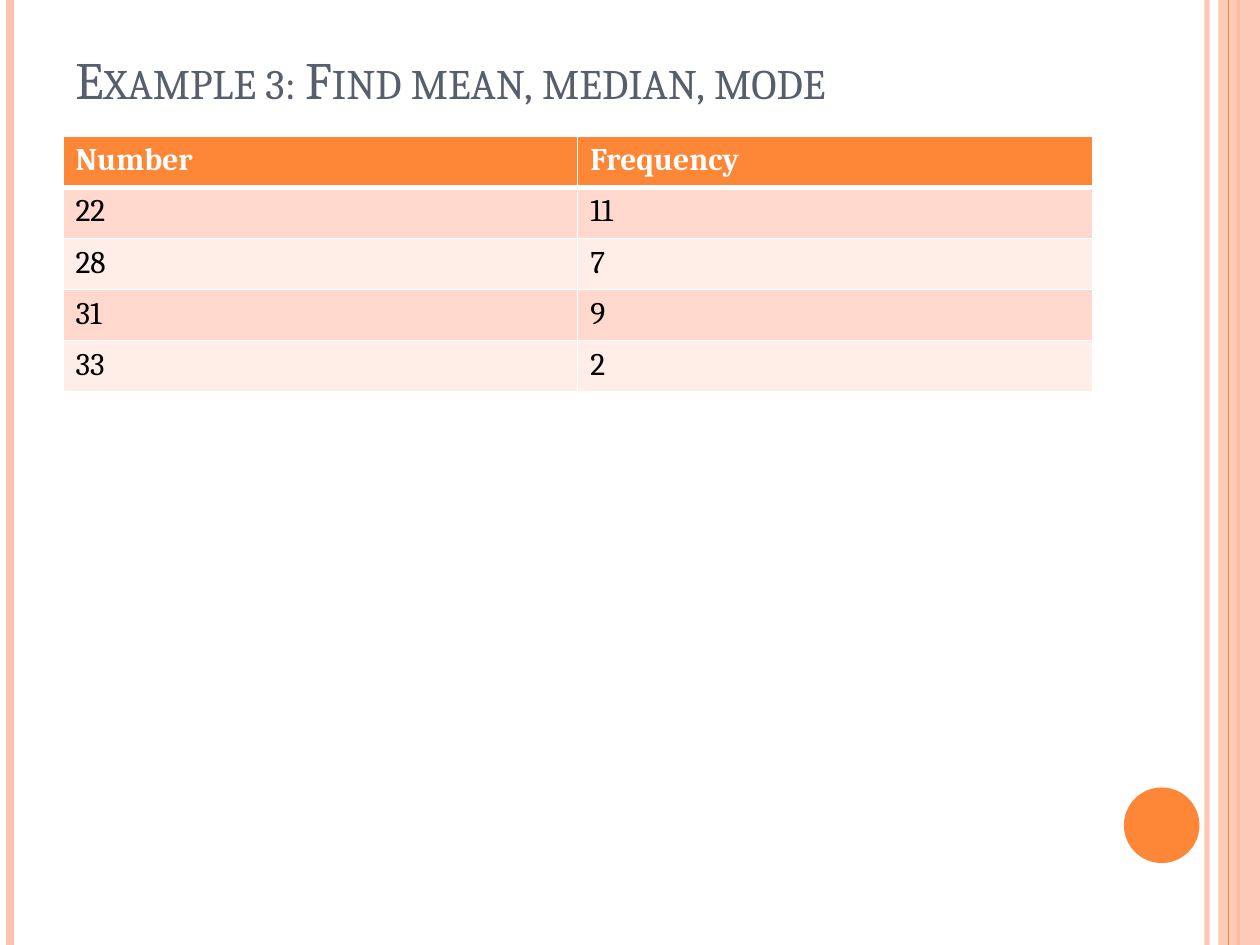
from lxml import etree
from pptx import Presentation
from pptx.dml.color import RGBColor
from pptx.enum.shapes import MSO_CONNECTOR, MSO_SHAPE
from pptx.enum.text import MSO_ANCHOR
from pptx.oxml.ns import qn
from pptx.util import Inches, Pt

STRAIGHT = MSO_CONNECTOR.STRAIGHT
RECTANGLE, OVAL = MSO_SHAPE.RECTANGLE, MSO_SHAPE.OVAL
BOTTOM = MSO_ANCHOR.BOTTOM

ORANGE = RGBColor(0xFE, 0x86, 0x37)
PEACH = RGBColor(0xFE, 0xC3, 0xAE)
SLATE = RGBColor(0x57, 0x5F, 0x6D)
WHITE = RGBColor(0xFF, 0xFF, 0xFF)
BLACK = RGBColor(0x00, 0x00, 0x00)
BANDS = (RGBColor(0xFF, 0xD9, 0xCE), RGBColor(0xFF, 0xED, 0xE8))
FONT = "Cambria"

WIDTH, HEIGHT = 10, 7.5
LEFT, CONTENT_WIDTH = 0.5, 8.17
TABLE_TOP, ROW_HEIGHT = 1.08, 0.406

TITLE = "Example 3: Find mean, median, mode"
FREQUENCIES = [
    ("Number", "Frequency"),
    ("22", "11"),
    ("28", "7"),
    ("31", "9"),
    ("33", "2"),
]
# x, colour, weight in points, opacity in percent
RULES_BEHIND_BAND = [
    (9.58, PEACH, 3, 93),
    (0.08, PEACH, 4.5, 100),
    (9.83, ORANGE, 1.5, 100),
]
RULE_OVER_BAND = (9.75, ORANGE, 0.75, 100)


def set_opacity(parent, percent):
    color = parent.find(".//" + qn("a:srgbClr"))
    etree.SubElement(color, qn("a:alpha"), val=str(percent * 1000))


def add_rule(slide, x, color, weight, opacity):
    """Draw a vertical line over the full slide height."""
    rule = slide.shapes.add_connector(
        STRAIGHT, Inches(x), 0, Inches(x), Inches(HEIGHT))
    rule.line.color.rgb = color
    rule.line.width = Pt(weight)
    if opacity < 100:
        set_opacity(rule.line._get_or_add_ln(), opacity)
    etree.SubElement(rule._element.spPr, qn("a:effectLst"))


def add_plain_shape(slide, preset, x, y, width, height, color):
    shape = slide.shapes.add_shape(
        preset, Inches(x), Inches(y), Inches(width), Inches(height))
    shape.shadow.inherit = False
    shape.fill.solid()
    shape.fill.fore_color.rgb = color
    shape.line.fill.background()
    return shape


def add_run(paragraph, text, size, color, bold=False):
    run = paragraph.add_run()
    run.text = text
    run.font.name = FONT
    run.font.size = Pt(size)
    run.font.color.rgb = color
    run.font.bold = bold
    return run


def add_title(slide):
    title = slide.shapes.add_textbox(
        Inches(LEFT), Inches(0.3), Inches(CONTENT_WIDTH), Inches(0.62))
    frame = title.text_frame
    frame.word_wrap = True
    frame.vertical_anchor = BOTTOM
    run = add_run(frame.paragraphs[0], TITLE, 30, SLATE)
    run.font._element.set("cap", "small")


def set_borders(cell, top, bottom):
    """Give the cell white borders; top and bottom weights are in points."""
    properties = cell._tc.get_or_add_tcPr()
    for side, weight in (("L", 1), ("R", 1), ("T", top), ("B", bottom)):
        border = etree.SubElement(
            properties, qn("a:ln" + side), w=str(Pt(weight)))
        fill = etree.SubElement(border, qn("a:solidFill"))
        etree.SubElement(fill, qn("a:srgbClr"), val=str(WHITE))


def add_frequency_table(slide):
    rows, columns = len(FREQUENCIES), len(FREQUENCIES[0])
    table = slide.shapes.add_table(
        rows, columns, Inches(LEFT), Inches(TABLE_TOP),
        Inches(CONTENT_WIDTH), Inches(ROW_HEIGHT * rows)).table
    for r, values in enumerate(FREQUENCIES):
        header = r == 0
        for c, value in enumerate(values):
            cell = table.cell(r, c)
            set_borders(cell, top=3 if r == 1 else 1, bottom=3 if header else 1)
            cell.fill.solid()
            cell.fill.fore_color.rgb = ORANGE if header else BANDS[(r - 1) % 2]
            add_run(cell.text_frame.paragraphs[0], value, 18,
                    WHITE if header else BLACK, bold=header)


def main():
    presentation = Presentation()
    presentation.slide_width = Inches(WIDTH)
    presentation.slide_height = Inches(HEIGHT)
    slide = presentation.slides.add_slide(presentation.slide_layouts[6])

    for rule in RULES_BEHIND_BAND:
        add_rule(slide, *rule)
    band = add_plain_shape(slide, RECTANGLE, 9.67, 0, 0.33, HEIGHT, PEACH)
    set_opacity(band._element.spPr, 87)
    add_rule(slide, *RULE_OVER_BAND)
    add_plain_shape(slide, OVAL, 8.92, 6.25, 0.6, 0.6, ORANGE)

    add_title(slide)
    add_frequency_table(slide)
    presentation.save("out.pptx")


if __name__ == "__main__":
    main()
